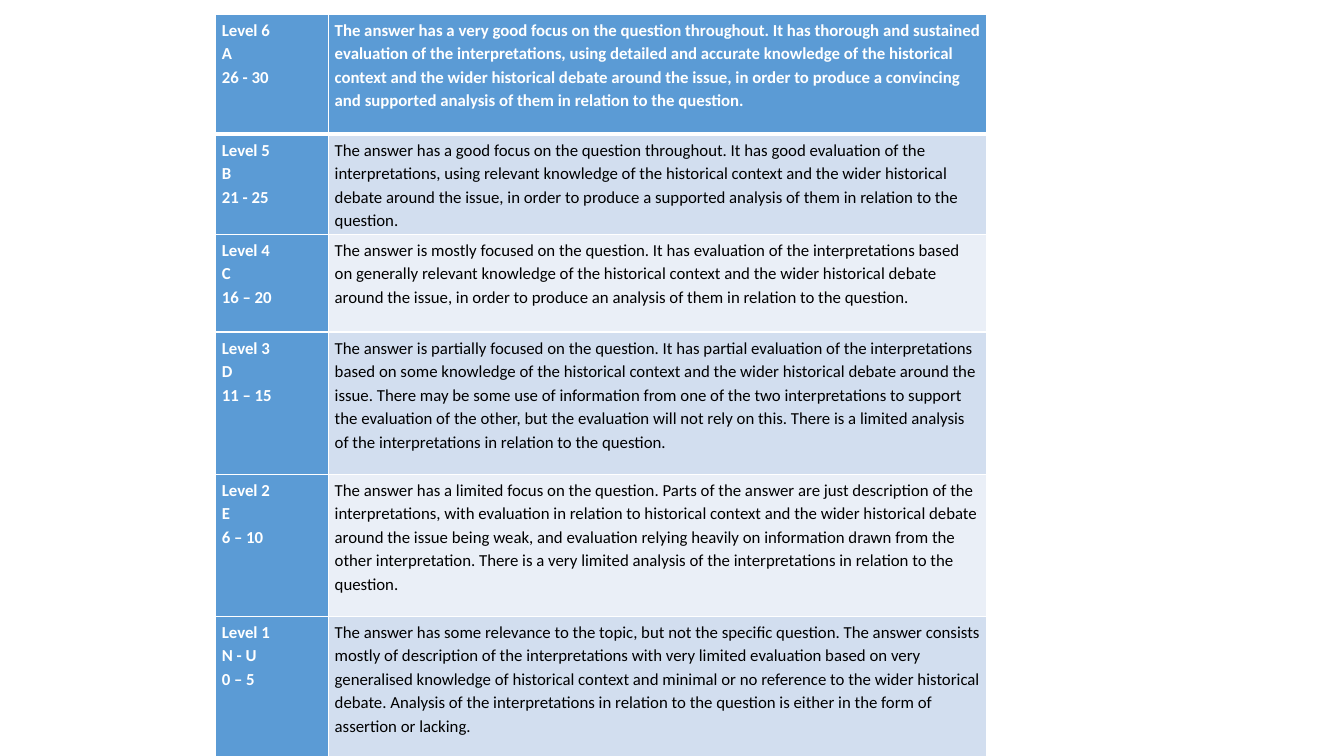
from dataclasses import dataclass
from lxml.etree import SubElement as Sub
from pptx import Presentation
from pptx.dml.color import RGBColor as RGB
from pptx.oxml.ns import qn
from pptx.util import Inches, Pt


@dataclass
class Theme:
    font: str = "Calibri"
    size: int = 12
    blue: str = "5B9BD5"
    bands: tuple = ("EAEFF7", "D2DEEF")
    white: str = "FFFFFF"
    black: str = "000000"
    thin: int = 1
    thick: int = 3


theme = Theme()


def write(cell, text, color=theme.black, bold=False):
    """Fill a cell with one paragraph per line of text."""
    cell.text = text
    for par in cell.text_frame.paragraphs:
        par.line_spacing = 1.15
        for run in par.runs:
            font = run.font
            font.name, font.size, font.bold = theme.font, Pt(theme.size), bold
            font.color.rgb = RGB.from_string(color)


def edge(cell, side, width):
    """Draw one white border of a cell."""
    line = Sub(cell._tc.get_or_add_tcPr(), qn(f"a:ln{side}"), w=str(Pt(width)))
    Sub(Sub(line, qn("a:solidFill")), qn("a:srgbClr"), val=theme.white)


# Level, grade, marks, row height and description
levels = [
    ("Level 6", "A", "26 - 30", 1.19,
     "The answer has a very good focus on the question throughout. It has thorough and "
     "sustained evaluation of the interpretations, using detailed and accurate knowledge of the "
     "historical context and the wider historical debate around the issue, in order to produce a "
     "convincing and supported analysis of them in relation to the question."),
    ("Level 5", "B", "21 - 25", 0.97,
     "The answer has a good focus on the question throughout. It has good evaluation of the "
     "interpretations, using relevant knowledge of the historical context and the wider historical "
     "debate around the issue, in order to produce a supported analysis of them in relation to the "
     "question."),
    ("Level 4", "C", "16 – 20", 0.97,
     "The answer is mostly focused on the question. It has evaluation of the interpretations based "
     "on generally relevant knowledge of the historical context and the wider historical debate "
     "around the issue, in order to produce an analysis of them in relation to the question."),
    ("Level 3", "D", "11 – 15", 1.41,
     "The answer is partially focused on the question. It has partial evaluation of the interpretations "
     "based on some knowledge of the historical context and the wider historical debate around the "
     "issue. There may be some use of information from one of the two interpretations to support "
     "the evaluation of the other, but the evaluation will not rely on this. There is a limited analysis "
     "of the interpretations in relation to the question."),
    ("Level 2", "E", "6 – 10", 1.41,
     "The answer has a limited focus on the question. Parts of the answer are just description of the "
     "interpretations, with evaluation in relation to historical context and the wider historical debate "
     "around the issue being weak, and evaluation relying heavily on information drawn from the "
     "other interpretation. There is a very limited analysis of the interpretations in relation to the "
     "question."),
    ("Level 1", "N - U", "0 – 5", 1.41,
     "The answer has some relevance to the topic, but not the specific question. The answer consists "
     "mostly of description of the interpretations with very limited evaluation based on very "
     "generalised knowledge of historical context and minimal or no reference to the wider historical "
     "debate. Analysis of the interpretations in relation to the question is either in the form of "
     "assertion or lacking."),
]

# Slide
deck = Presentation()
deck.slide_width, deck.slide_height = Inches(13.33), Inches(7.5)
slide = deck.slides.add_slide(deck.slide_layouts[6])

# Table frame
table = slide.shapes.add_table(
    len(levels), 2, Inches(2.14), Inches(0.14), Inches(7.65), Inches(7.37)).table
for col, width in zip(table.columns, (1.12, 6.53)):
    col.width = Inches(width)

# Rows: a blue head row and first column, then banded descriptions
for i, (level, grade, marks, height, about) in enumerate(levels):
    row = table.rows[i]
    row.height = Inches(height)
    for j, cell in enumerate(row.cells):
        cell.margin_left = cell.margin_right = Inches(0.06)
        cell.margin_top = cell.margin_bottom = Inches(0.03)
        for side in "LRTB":
            heavy = (i, side) in ((0, "B"), (1, "T"))
            edge(cell, side, theme.thick if heavy else theme.thin)
        head = i == 0 or j == 0
        cell.fill.solid()
        cell.fill.fore_color.rgb = RGB.from_string(theme.blue if head else theme.bands[i % 2])
        text = about if j else "\n".join((level, grade, marks))
        write(cell, text, color=theme.white if head else theme.black, bold=head)

deck.save("out.pptx")
